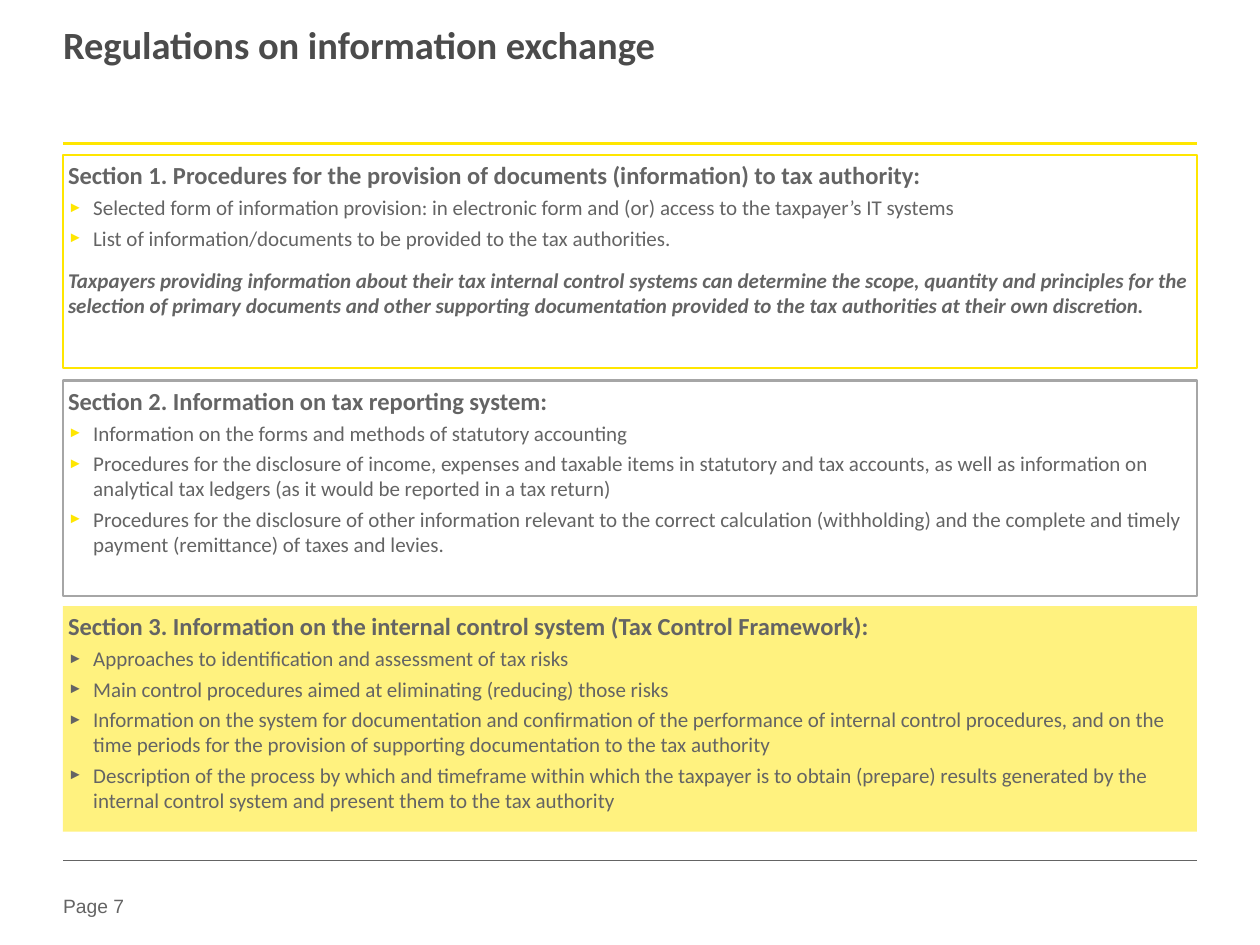
from dataclasses import dataclass

from lxml.etree import SubElement
from pptx import Presentation
from pptx.dml.color import RGBColor
from pptx.enum.shapes import MSO_CONNECTOR as Connector, MSO_SHAPE as Shape
from pptx.enum.text import MSO_ANCHOR as Anchor, PP_ALIGN as Align
from pptx.oxml.ns import qn
from pptx.util import Pt


@dataclass(frozen=True)
class Theme:
    text: str = "646464"
    title: str = "4B4B4B"
    accent: str = "FFE600"
    border: str = "A6A6A6"
    title_size: float = 22
    heading_size: float = 14
    body_size: float = 12
    footer_size: float = 11
    font: str = "Calibri"
    footer_font: str = "Arial"


THEME = Theme()
LEFT, WIDTH = 36, 648
FIRST_TOP, PITCH = 88.56, 128.88
INSET = 2.9
INDENT = 14.4

SECTIONS = [
    dict(
        heading="Section 1. Procedures for the provision of documents (information) to tax authority:",
        points=[
            "Selected form of information provision: in electronic form and (or) access to the taxpayer’s IT systems",
            "List of information/documents to be provided to the tax authorities.",
        ],
        remark="Taxpayers providing information about their tax internal control systems can determine "
               "the scope, quantity and principles for the selection of primary documents and other "
               "supporting documentation provided to the tax authorities at their own discretion.",
        height=121.7, border=THEME.accent, marker=THEME.accent,
    ),
    dict(
        heading="Section 2. Information on tax reporting system:",
        points=[
            "Information on the forms and methods of statutory accounting",
            "Procedures for the disclosure of income, expenses and taxable items in statutory and tax "
            "accounts, as well as information on analytical tax ledgers (as it would be reported in a tax return)",
            "Procedures for the disclosure of other information relevant to the correct calculation "
            "(withholding) and the complete and timely payment (remittance) of taxes and levies.",
        ],
        height=123.1, border=THEME.border, marker=THEME.accent,
    ),
    dict(
        heading="Section 3. Information on the internal control system (Tax Control Framework):",
        points=[
            "Approaches to identification and assessment of tax risks",
            "Main control procedures aimed at eliminating (reducing) those risks",
            "Information on the system for documentation and confirmation of the performance of internal "
            "control procedures, and on the time periods for the provision of supporting documentation "
            "to the tax authority",
            "Description of the process by which and timeframe within which the taxpayer is to obtain "
            "(prepare) results generated by the internal control system and present them to the tax authority",
        ],
        height=128.9, fill=THEME.accent, marker=THEME.text,
    ),
]


def apply_format(target, **values):
    for attribute, value in values.items():
        setattr(target, attribute, value)


def prepare_frame(frame, inset=0):
    margins = {f"margin_{side}": Pt(inset) for side in ("left", "top", "right", "bottom")}
    apply_format(frame, word_wrap=True, vertical_anchor=Anchor.TOP, **margins)


def write(paragraph, words, size, color=THEME.text, font=THEME.font, bold=False, italic=False):
    paragraph.alignment = Align.LEFT
    run = paragraph.add_run()
    run.text = words
    apply_format(run.font, name=font, size=Pt(size), bold=bold, italic=italic)
    run.font.color.rgb = RGBColor.from_string(color)


def add_marker(paragraph, color):
    """Give the paragraph a hanging arrowhead bullet."""
    properties = paragraph._p.get_or_add_pPr()
    properties.set("marL", str(Pt(INDENT)))
    properties.set("indent", str(-Pt(INDENT)))
    SubElement(SubElement(properties, qn("a:buClr")), qn("a:srgbClr"), val=color)
    SubElement(properties, qn("a:buSzPct"), val="70000")
    SubElement(properties, qn("a:buFont"), typeface="Arial")
    SubElement(properties, qn("a:buChar"), char="►")


def add_title(slide, words):
    title = slide.shapes.title
    apply_format(title, left=Pt(LEFT), top=Pt(15.8), width=Pt(WIDTH), height=Pt(67.7))
    prepare_frame(title.text_frame)
    paragraph = title.text_frame.paragraphs[0]
    paragraph.line_spacing = 0.85
    write(paragraph, words, THEME.title_size, THEME.title, bold=True)


def add_rule(slide, top, color, weight):
    rule = slide.shapes.add_connector(Connector.STRAIGHT, Pt(LEFT), Pt(top), Pt(LEFT + WIDTH), Pt(top))
    rule.line.color.rgb = RGBColor.from_string(color)
    rule.line.width = Pt(weight)
    SubElement(rule._element.spPr, qn("a:effectLst"))


def add_panel(slide, top, height, border, fill):
    panel = slide.shapes.add_shape(Shape.RECTANGLE, Pt(LEFT), Pt(top), Pt(WIDTH), Pt(height))
    panel.shadow.inherit = False
    if fill:
        panel.fill.solid()
        panel.fill.fore_color.rgb = RGBColor.from_string(fill)
        tint = panel._element.spPr.find(qn("a:solidFill")).find(qn("a:srgbClr"))
        SubElement(tint, qn("a:alpha"), val="50000")
    else:
        panel.fill.background()
    if border:
        panel.line.color.rgb = RGBColor.from_string(border)
        panel.line.width = Pt(1.5)
    else:
        panel.line.fill.background()
    prepare_frame(panel.text_frame, INSET)
    return panel.text_frame


def add_section(slide, top, heading, points, height, marker, border=None, fill=None, remark=None):
    frame = add_panel(slide, top, height, border, fill)
    write(frame.paragraphs[0], heading, THEME.heading_size, bold=True)
    for point in points:
        paragraph = frame.add_paragraph()
        apply_format(paragraph, level=1, space_before=Pt(3))
        add_marker(paragraph, marker)
        write(paragraph, point, THEME.body_size)
    if remark:
        paragraph = frame.add_paragraph()
        paragraph.space_before = Pt(9.8)
        write(paragraph, remark, THEME.body_size, bold=True, italic=True)


def add_page_number(slide, words):
    footer = slide.shapes.add_textbox(Pt(LEFT), Pt(511.2), Pt(57), Pt(15.8))
    prepare_frame(footer.text_frame)
    write(footer.text_frame.paragraphs[0], words, THEME.footer_size, font=THEME.footer_font)


def main():
    deck = Presentation()
    apply_format(deck, slide_width=Pt(720), slide_height=Pt(540))
    slide = deck.slides.add_slide(deck.slide_layouts[5])
    add_title(slide, "Regulations on information exchange")
    add_rule(slide, 82.1, THEME.accent, 1.5)
    for index, section in enumerate(SECTIONS):
        add_section(slide, FIRST_TOP + index * PITCH, **section)
    add_rule(slide, 491.8, THEME.text, 0.25)
    add_page_number(slide, "Page 7")
    deck.save("out.pptx")


if __name__ == "__main__":
    main()
